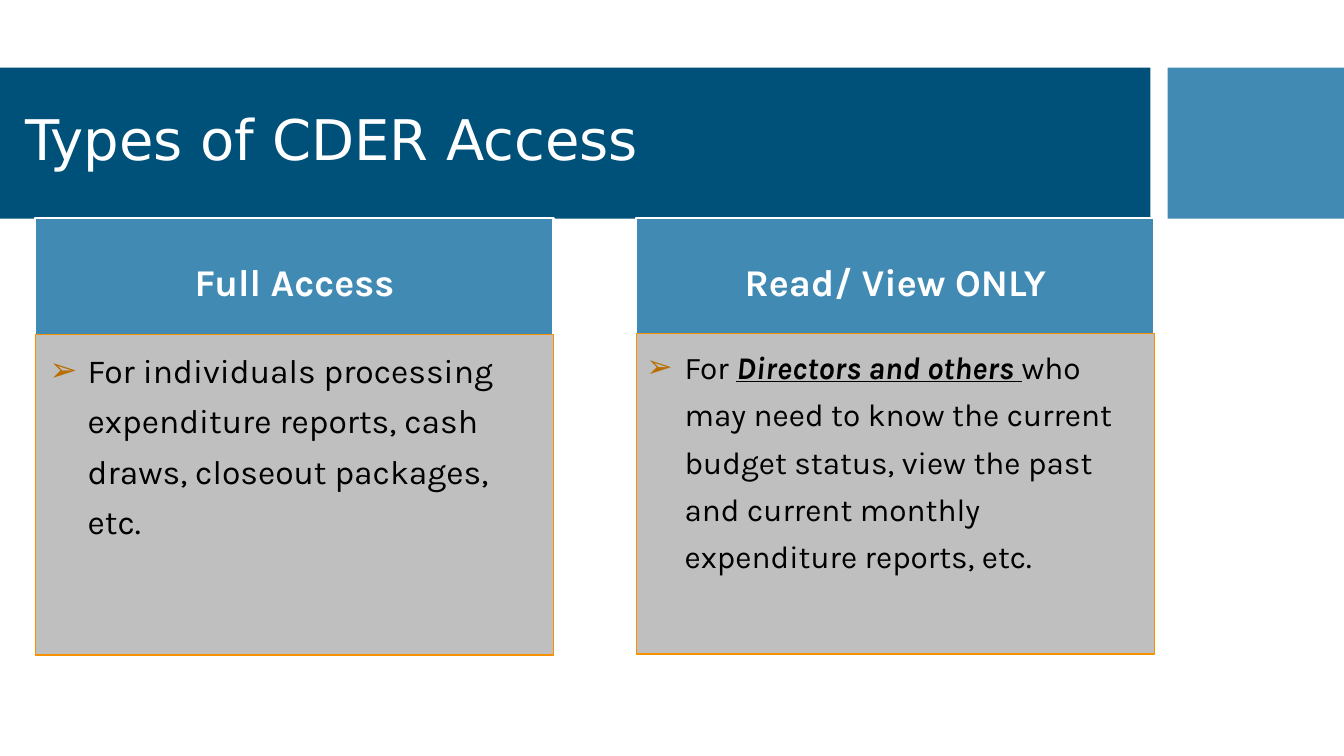
from lxml import etree
from pptx import Presentation
from pptx import util as u
from pptx.dml.color import RGBColor
from pptx.enum import shapes, text
from pptx.oxml import ns

NAVY = RGBColor(0x00, 0x51, 0x79)
BLUE = RGBColor(0x41, 0x8A, 0xB3)
GRAY = RGBColor(0xBF, 0xBF, 0xBF)
ORANGE = RGBColor(0xF6, 0x92, 0x00)
BULLET = RGBColor(0xB8, 0x6E, 0x00)
WHITE = RGBColor(0xFF, 0xFF, 0xFF)
BLACK = RGBColor(0x00, 0x00, 0x00)

COLUMN_WIDTH = 5.14
HEADING_HEIGHT = 1.16
BODY_HEIGHT = 3.18


def fill_box(box, bounds, anchor, spans, size, font, color, spacing, align):
    """Place a placeholder and write one formatted paragraph in it."""
    box.left, box.top, box.width, box.height = [u.Inches(n) for n in bounds]
    frame = box.text_frame
    for name, value in {"word_wrap": True, "vertical_anchor": anchor,
                        "auto_size": text.MSO_AUTO_SIZE.NONE}.items():
        setattr(frame, name, value)
    para = frame.paragraphs[0]
    for name, value in {"alignment": align, "line_spacing": spacing,
                        "space_before": u.Pt(0)}.items():
        setattr(para, name, value)
    for words, styles in spans:
        span = para.add_run()
        span.text = words
        span.font.color.rgb = color
        for name, value in {"size": u.Pt(size), "name": font, **styles}.items():
            setattr(span.font, name, value)
    return para


def paint(box, fill, line, width):
    """Give a box a solid fill and an outline."""
    box.fill.solid()
    box.fill.fore_color.rgb = fill
    box.line.color.rgb = line
    box.line.width = u.Pt(width)


deck = Presentation()
deck.slide_width, deck.slide_height = u.Inches(13.33), u.Inches(7.5)
page = deck.slides.add_slide(deck.slide_layouts[4])
title, *column_boxes = page.placeholders

# Title bands, placed behind the title
for left, width, color in [(0, 11.41, NAVY), (11.58, 1.75, BLUE)]:
    band = page.shapes.add_shape(
        shapes.MSO_SHAPE.RECTANGLE, u.Inches(left), u.Inches(0.67),
        u.Inches(width), u.Inches(1.5))
    band.shadow.inherit = False
    band.fill.solid()
    band.fill.fore_color.rgb = color
    band.line.fill.background()
    title.element.addprevious(band.element)

# Title
fill_box(title, (0.15, 0.82, 11.11, 1.18), text.MSO_ANCHOR.MIDDLE,
         [("Types of CDER Access", {})], 40, "DejaVu Sans", WHITE, 0.9,
         text.PP_ALIGN.LEFT)

# Two columns: left, heading bottom, heading, body size, indent, body spans
columns = [
    (0.35, 3.32, "Full Access", 24, 0.42,
     [("For individuals processing expenditure reports, cash draws, "
       "closeout packages, etc.", {})]),
    (6.31, 3.31, "Read/ View ONLY", 22.5, 0.38,
     [("For ", {}),
      ("Directors and others ", {"bold": True, "italic": True, "underline": True}),
      ("who may need to know the current budget status, view the past and "
       "current monthly expenditure reports, etc.", {})]),
]
for number, (left, middle, heading, size, indent, spans) in enumerate(columns):
    heading_box, body_box = column_boxes[2 * number:2 * number + 2]

    # Heading
    top = 2.16
    fill_box(heading_box, (left, top, COLUMN_WIDTH, middle - top),
             text.MSO_ANCHOR.MIDDLE, [(heading, {"bold": True})], 27, "Karla",
             WHITE, 1.25, text.PP_ALIGN.CENTER)
    paint(heading_box, BLUE, WHITE, 1.5)

    # Body with an arrow bullet
    para = fill_box(body_box, (left, middle, COLUMN_WIDTH, BODY_HEIGHT),
                    text.MSO_ANCHOR.TOP, spans, size, "Karla", BLACK, 1.25,
                    text.PP_ALIGN.LEFT)
    paint(body_box, GRAY, ORANGE, 1)
    props = para._p.get_or_add_pPr()
    props.set("marL", str(u.Inches(indent)))
    props.set("indent", str(u.Inches(-0.38)))
    bullet_color = etree.SubElement(props, ns.qn("a:buClr"))
    etree.SubElement(bullet_color, ns.qn("a:srgbClr")).set("val", str(BULLET))
    etree.SubElement(props, ns.qn("a:buChar")).set("char", "➢")

deck.save("out.pptx")
